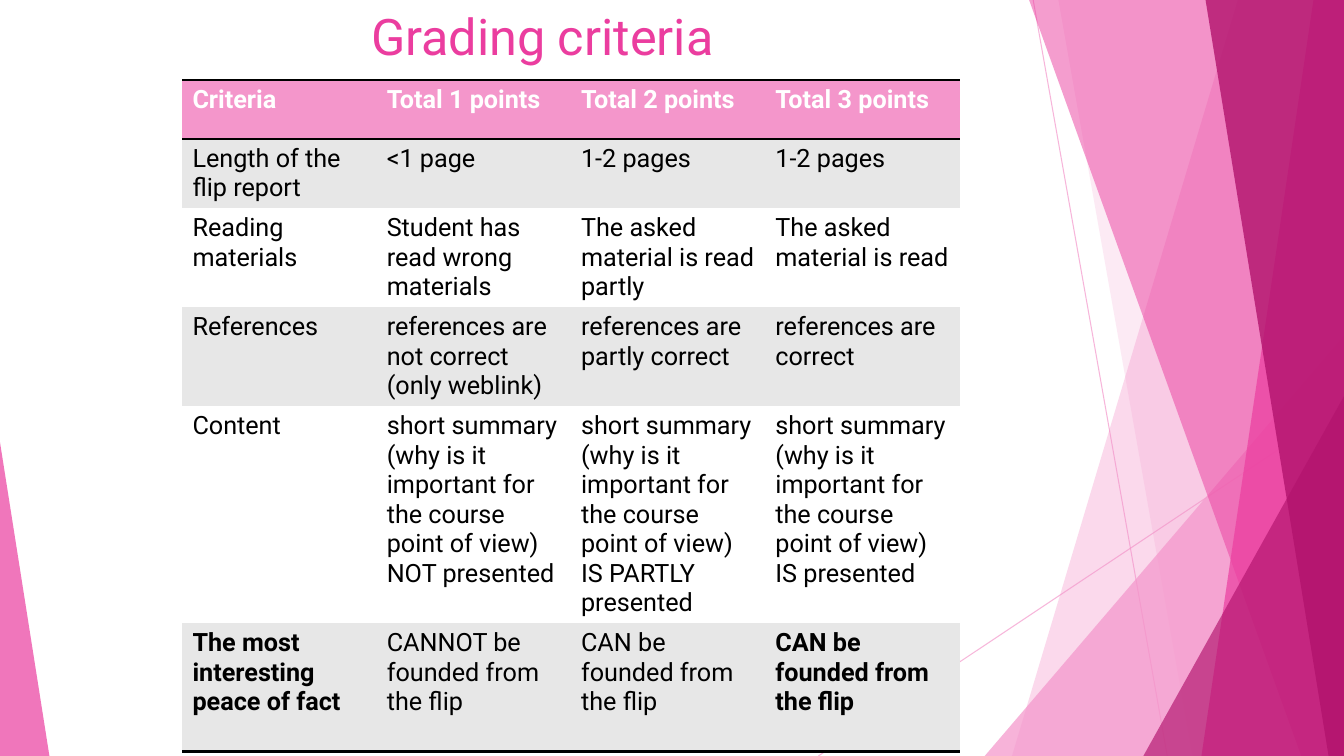
"""Build the grading criteria slide with its faceted pink backdrop."""
from lxml import etree
from pptx import Presentation
from pptx.dml.color import RGBColor
from pptx.enum.shapes import MSO_CONNECTOR, MSO_SHAPE
from pptx.enum.text import MSO_ANCHOR, PP_ALIGN
from pptx.oxml.ns import qn
from pptx.util import Pt

LINE = MSO_CONNECTOR.STRAIGHT
WEDGE = MSO_SHAPE.ISOSCELES_TRIANGLE
TOP = MSO_ANCHOR.TOP
LEFT = PP_ALIGN.LEFT

WIDTH, HEIGHT = 960, 540
FONT = "Roboto"
PALE, PINK, DEEP = "F496CB", "EB3D9F", "B2136D"
BLACK, WHITE, GREY = "000000", "FFFFFF", "E7E7E7"
PLAIN = "{2D5ABB26-0587-4C30-8999-92F81FD0307C}"

RAYS = [((738, 0), (833.8, HEIGHT)), ((WIDTH, 290), (584.6, HEIGHT))]
BANDS = [
    (884.2, 722.9, PALE, 36),
    (756, 851.8, PALE, 20),
    (735.1, 929.5, PINK, 50),
    (938.2, 858.2, PINK, 70),
    (861.1, 949, DEEP, 80),
]
BACK, FRONT = BANDS[:2], BANDS[2:]

SUMMARY = "short summary (why is it important for the course point of view) "
ROWS = [
    ["Criteria", "Total 1 points", "Total 2 points", "Total 3 points"],
    ["Length of the flip report", "<1 page", "1-2 pages", "1-2 pages"],
    ["Reading materials", "Student has read wrong materials",
     "The asked material is read partly", "The asked material is read"],
    ["References", "references are not correct (only weblink)",
     "references are partly correct", "references are correct"],
    ["Content", SUMMARY + "NOT presented", SUMMARY + "IS PARTLY presented",
     SUMMARY + "IS presented"],
    ["The most interesting peace of fact", "CANNOT be founded from the flip",
     "CAN be founded from the flip", "CAN be founded from the flip"],
]
TALL = [42, 49.2, 70.7, 70.7, 155, 91.6]
LAST = len(ROWS) - 1
BOLD = {(LAST, 0), (LAST, 3)}


def paint(fmt, color, alpha=100):
    """Give a fill a solid colour with an opacity in percent."""
    fmt.solid()
    fmt.fore_color.rgb = RGBColor.from_string(color)
    if alpha < 100:
        tint = fmt._xPr.find(".//" + qn("a:srgbClr"))
        etree.SubElement(tint, qn("a:alpha")).set("val", str(alpha * 1000))


def style(para, size, color, bold=False):
    """Set the font of a paragraph."""
    font = para.font
    font.name, font.size, font.bold = FONT, Pt(size), bold
    font.color.rgb = RGBColor.from_string(color)


def finish(shape, color, alpha):
    """Fill a facet and drop its outline and shadow."""
    paint(shape.fill, color, alpha)
    shape.line.fill.background()
    shape.shadow.inherit = False


def add_ray(slide, start, end):
    """Draw a thin translucent line."""
    ray = slide.shapes.add_connector(LINE, *map(Pt, start + end))
    ray.line.width = Pt(0.75)
    paint(ray.line.fill, PALE, 70)
    etree.SubElement(ray._element.spPr, qn("a:effectLst"))


def add_band(slide, top, base, color, alpha):
    """Draw a slanted band that reaches the right edge."""
    form = slide.shapes.build_freeform(Pt(top), 0)
    spots = [(WIDTH, 0), (WIDTH, HEIGHT), (base, HEIGHT)]
    form.add_line_segments([(Pt(x), Pt(y)) for x, y in spots])
    finish(form.convert_to_shape(), color, alpha)


def add_wedge(slide, left, top, width, peak, color, alpha):
    """Draw a triangle that stands on the bottom edge."""
    wedge = slide.shapes.add_shape(
        WEDGE, Pt(left), Pt(top), Pt(width), Pt(HEIGHT - top))
    wedge.adjustments[0] = peak
    finish(wedge, color, alpha)


def add_rule(cell, side):
    """Add a black border on one side of a cell."""
    rule = etree.Element(qn("a:ln" + side), w=str(Pt(2)))
    fill = etree.SubElement(rule, qn("a:solidFill"))
    etree.SubElement(fill, qn("a:srgbClr"), val=BLACK)
    cell._tc.get_or_add_tcPr().insert(0, rule)


def add_grid(slide):
    """Add the table of criteria."""
    frame = slide.shapes.add_table(
        len(ROWS), len(ROWS[0]), Pt(130.3), Pt(57.3), Pt(555.2), Pt(sum(TALL)))
    table = frame.table
    table._tbl.tblPr.find(qn("a:tableStyleId")).text = PLAIN
    for i, (row, tall) in enumerate(zip(ROWS, TALL)):
        table.rows[i].height = Pt(tall)
        head = i == 0
        back = PALE if head else GREY if i % 2 else WHITE
        for j, text in enumerate(row):
            cell = table.cell(i, j)
            cell.text = text
            style(cell.text_frame.paragraphs[0], 18,
                  WHITE if head else BLACK, head or (i, j) in BOLD)
            paint(cell.fill, back)
            if head or i == LAST:
                add_rule(cell, "B")
            if head:
                add_rule(cell, "T")


def set_title(slide, text):
    """Place and format the title."""
    title = slide.shapes.title
    title.left, title.top = Pt(257.8), Pt(0)
    title.width, title.height = Pt(676.8), Pt(46.8)
    frame = title.text_frame
    frame.text = text
    frame.vertical_anchor = TOP
    para = frame.paragraphs[0]
    para.alignment = LEFT
    style(para, 36, PINK)


def main():
    """Build and save the slide."""
    deck = Presentation()
    deck.slide_width, deck.slide_height = Pt(WIDTH), Pt(HEIGHT)
    slide = deck.slides.add_slide(deck.slide_layouts[5])
    for ray in RAYS:
        add_ray(slide, *ray)
    for band in BACK:
        add_band(slide, *band)
    add_wedge(slide, 703.4, 240, 256.6, 1, PALE, 72)
    for band in FRONT:
        add_band(slide, *band)
    add_wedge(slide, 816.7, 283, 143.3, 1, DEEP, 66)
    add_wedge(slide, 0, 316, 35.3, 0, PINK, 70)
    add_grid(slide)
    set_title(slide, "Grading criteria")
    deck.save("out.pptx")


if __name__ == "__main__":
    main()
